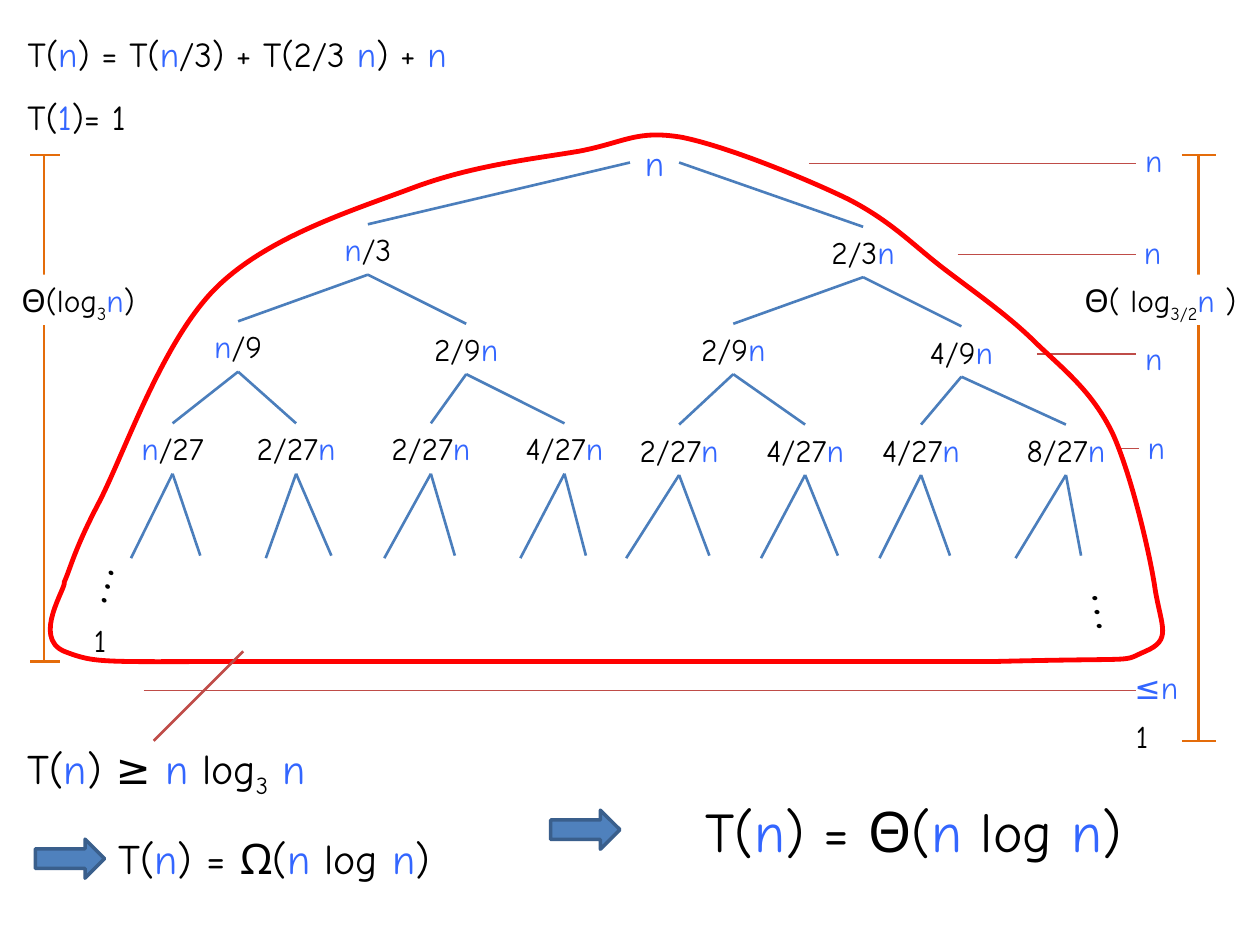
from pptx import Presentation
from pptx.dml.color import RGBColor
from pptx.enum.shapes import MSO_CONNECTOR, MSO_SHAPE
from pptx.enum.text import MSO_ANCHOR, MSO_AUTO_SIZE, PP_ALIGN
from pptx.oxml.ns import qn
from pptx.util import Cm, Pt
from lxml.etree import SubElement

COLORS = {"text": "000000", "variable": "3366FF", "branch": "4B7EBC",
          "level": "BF4C48", "bracket": "E46C0A", "outline": "FF0000",
          "arrow": "4F81BD", "arrow_edge": "3A5F8C", "white": "FFFFFF"}
FONT = "Comic Neue"
UNIT = 2.54  # cm per grid unit; the slide is 10 by 7.5 units
ROW = 0.4    # height of one line of 18 pt text

# Inner node: label, centre x, top, width, children. A leaf has the x of its two twigs.
LEFT_TREE = ("*n*/3", 2.92, 1.78, 0.91, [
    ("*n*/9", 1.89, 2.55, 0.91, [
        ("*n*/27", 1.37, 3.36, 0.91, (1.04, 1.59)),
        ("2/27*n*", 2.35, 3.36, 1, (2.11, 2.63))]),
    ("2/9*n*", 3.7, 2.57, 0.91, [
        ("2/27*n*", 3.42, 3.36, 1.12, (3.05, 3.61)),
        ("4/27*n*", 4.48, 3.36, 1.04, (4.13, 4.65))])])
RIGHT_TREE = ("2/3*n*", 6.85, 1.8, 0.91, [
    ("2/9*n*", 5.82, 2.57, 0.91, [
        ("2/27*n*", 5.39, 3.37, 1.1, (4.97, 5.63)),
        ("4/27*n*", 6.39, 3.37, 1.01, (6.04, 6.65))]),
    ("4/9*n*", 7.63, 2.59, 0.91, [
        ("4/27*n*", 7.31, 3.37, 1.04, (6.98, 7.54)),
        ("8/27*n*", 8.46, 3.37, 1.12, (8.06, 8.58))])])

# Label, left, top, and the y, left end and right end of the line that leads to it
LEVELS = [("*n *", 8.76, 1.07, 1.3, 6.42, 9.02), ("*n *", 8.75, 1.8, 2.02, 7.6, 9.02),
          ("*n *", 8.76, 2.64, 2.81, 8.23, 9.02), ("*n *", 8.78, 3.35, 3.56, 8.88, 9.04),
          ("*≤n *", 8.78, 5.25, 5.48, 1.14, 9.02)]

# Bézier segments (control, control, end); a single point is a straight segment
OUTLINE_START = (0.51, 4.62)
OUTLINE = [
    [(0.56, 4.51), (0.59, 4.36), (0.79, 3.98)],
    [(0.99, 3.59), (1.29, 2.71), (1.71, 2.29)],
    [(2.12, 1.88), (2.8, 1.67), (3.28, 1.49)],
    [(3.76, 1.31), (4.25, 1.26), (4.6, 1.2)],
    [(4.96, 1.13), (5.05, 1.03), (5.41, 1.09)],
    [(5.76, 1.16), (6.38, 1.41), (6.73, 1.58)],
    [(7.08, 1.76), (7.25, 1.95), (7.5, 2.14)],
    [(7.75, 2.33), (8.01, 2.51), (8.23, 2.73)],
    [(8.45, 2.94), (8.67, 3.11), (8.83, 3.44)],
    [(8.98, 3.77), (9.13, 4.41), (9.17, 4.69)],
    [(9.22, 4.98), (9.3, 5.08), (9.09, 5.17)],
    [(8.88, 5.26), (9.12, 5.22), (7.91, 5.25)],
    [(2.09, 5.25)],
    [(0.79, 5.25), (0.77, 5.27), (0.51, 5.17)],
    [(0.25, 5.06), (0.53, 4.66), (0.51, 4.62)]]


def units(*values):
    return [Cm(v * UNIT) for v in values]


def rgb(name):
    return RGBColor.from_string(COLORS[name])


def add_text(s, text, x, y, w, h=ROW, size=18, align=PP_ALIGN.LEFT,
             rotation=0, sp=None):
    """Write text where *...* marks a variable and _..._ a subscript."""
    sp = sp or s.shapes.add_textbox(0, 0, 0, 0)
    sp.left, sp.top, sp.width, sp.height = units(x, y, w, h)
    sp.rotation = rotation
    tf = sp.text_frame
    tf.word_wrap = True
    tf.auto_size = MSO_AUTO_SIZE.SHAPE_TO_FIT_TEXT
    tf.vertical_anchor = MSO_ANCHOR.TOP
    p = tf.paragraphs[0]
    p.alignment = align
    for i, part in enumerate(text.split("*")):
        for j, piece in enumerate(part.split("_")):
            if not piece:
                continue
            r = p.add_run()
            r.text = piece
            r.font.name, r.font.size = FONT, Pt(size)
            r.font.color.rgb = rgb("variable" if i % 2 else "text")
            if j % 2:
                r.font._element.set("baseline", "-25000")


def add_centered(s, text, x, y, w, **fmt):
    add_text(s, text, x, y, w, align=PP_ALIGN.CENTER, **fmt)


def add_line(shapes, start, end, color="branch", width=1.5):
    c = shapes.add_connector(MSO_CONNECTOR.STRAIGHT, *units(*start, *end))
    c.line.color.rgb = rgb(color)
    c.line.width = Pt(width)
    SubElement(c._element.spPr, qn("a:effectLst"))


def add_tree(s, node):
    label, x, y, w, children = node
    add_centered(s, label, x - w / 2, y, w)
    bottom = (x, y + ROW)
    if isinstance(children, tuple):
        for end in zip(children, (4.43, 4.41)):
            add_line(s.shapes, bottom, end)
        return
    for child in children:
        add_line(s.shapes, bottom, child[1:3])
        add_tree(s, child)


def add_bracket(s, x, left, right, top, bottom):
    shapes = s.shapes.add_group_shape().shapes
    add_line(shapes, (x, top), (x, bottom), "bracket")
    for y in (top, bottom):
        add_line(shapes, (left, y), (right, y), "bracket")


def add_shape(s, kind, fill, x, y, w, h):
    sp = s.shapes.add_shape(kind, *units(x, y, w, h))
    sp.shadow.inherit = False
    sp.fill.solid()
    sp.fill.fore_color.rgb = rgb(fill)
    sp.line.fill.background()
    return sp


def add_bracket_label(s, text, x, w):
    box = (x, 2.18, w, ROW)
    add_centered(s, text, *box[:3], sp=add_shape(s, MSO_SHAPE.RECTANGLE, "white", *box))


def add_arrow(s, x, y):
    sp = add_shape(s, MSO_SHAPE.RIGHT_ARROW, "arrow", x, y, 0.55, 0.31)
    sp.line.color.rgb = rgb("arrow_edge")
    sp.line.width = Pt(2)


def add_outline(s):
    """Lay out all points as lines, then join each triple into a Bézier curve."""
    builder = s.shapes.build_freeform(*units(*OUTLINE_START))
    builder.add_line_segments([units(*pt) for seg in OUTLINE for pt in seg], close=False)
    sp = builder.convert_to_shape()
    sp.shadow.inherit = False
    sp.fill.background()
    sp.line.color.rgb = rgb("outline")
    sp.line.width = Pt(2.75)
    lines = iter(list(sp._element.iter(qn("a:lnTo"))))
    for seg in OUTLINE:
        first, *rest = [next(lines) for _ in seg]
        if rest:
            curve = first.makeelement(qn("a:cubicBezTo"))
            first.addprevious(curve)
            for line in (first, *rest):
                curve.append(line[0])
                line.getparent().remove(line)


def main():
    prs = Presentation()
    prs.slide_width, prs.slide_height = units(10, 7.5)
    s = prs.slides.add_slide(prs.slide_layouts[5])

    add_text(s, "T(*n*) = T(*n*/3) + T(2/3 *n*) + *n*", 0.12, 0.21, 4.17, 0.44,
             size=20, sp=s.shapes.title)
    add_text(s, "T(*1*)= 1", 0.12, 0.71, 1.26, 0.44, size=20)
    add_arrow(s, 4.37, 6.43)

    add_centered(s, "*n*", 5, 1.07, 0.39, h=0.44, size=20)
    for tree, x in ((LEFT_TREE, 5), (RIGHT_TREE, 5.39)):
        add_line(s.shapes, (x, 1.29), tree[1:3])
        add_tree(s, tree)
    add_text(s, "T(*n*) = Θ(*n* log *n*)", 5.5, 6.27, 3.86, 0.64, size=32)
    for x, y, angle in ((0.88, 4.4, 104.1), (8.72, 4.51, 81.1)):
        add_text(s, "…", x, y, 0.39, 0.53, size=32, rotation=angle)
    for x, y in ((0.51, 4.88), (8.78, 5.64)):
        add_centered(s, "1", x, y, 0.57)

    add_bracket(s, 0.35, 0.24, 0.48, 1.23, 5.25)
    add_bracket_label(s, "Θ(log_3_*n*)", 0.02, 1.2)
    add_bracket(s, 9.51, 9.38, 9.65, 1.23, 5.88)
    add_bracket_label(s, "Θ( log_3/2_*n* )", 8.46, 1.5)

    for label, x, y, line_y, start, end in LEVELS:
        add_centered(s, label, x, y, 0.88)
        add_line(s.shapes, (start, line_y), (end, line_y), "level", 0.75)
    add_outline(s)

    add_text(s, "T(*n*) ≥ *n* log_3_ *n*", 0.12, 5.84, 3.74, 0.5, size=24)
    add_text(s, "T(*n*) = Ω(*n* log *n*)", 0.84, 6.56, 3.74, 0.5, size=24)
    add_arrow(s, 0.28, 6.66)
    add_line(s.shapes, (1.22, 5.88), (1.93, 5.17), "level")

    prs.save("out.pptx")


if __name__ == "__main__":
    main()
